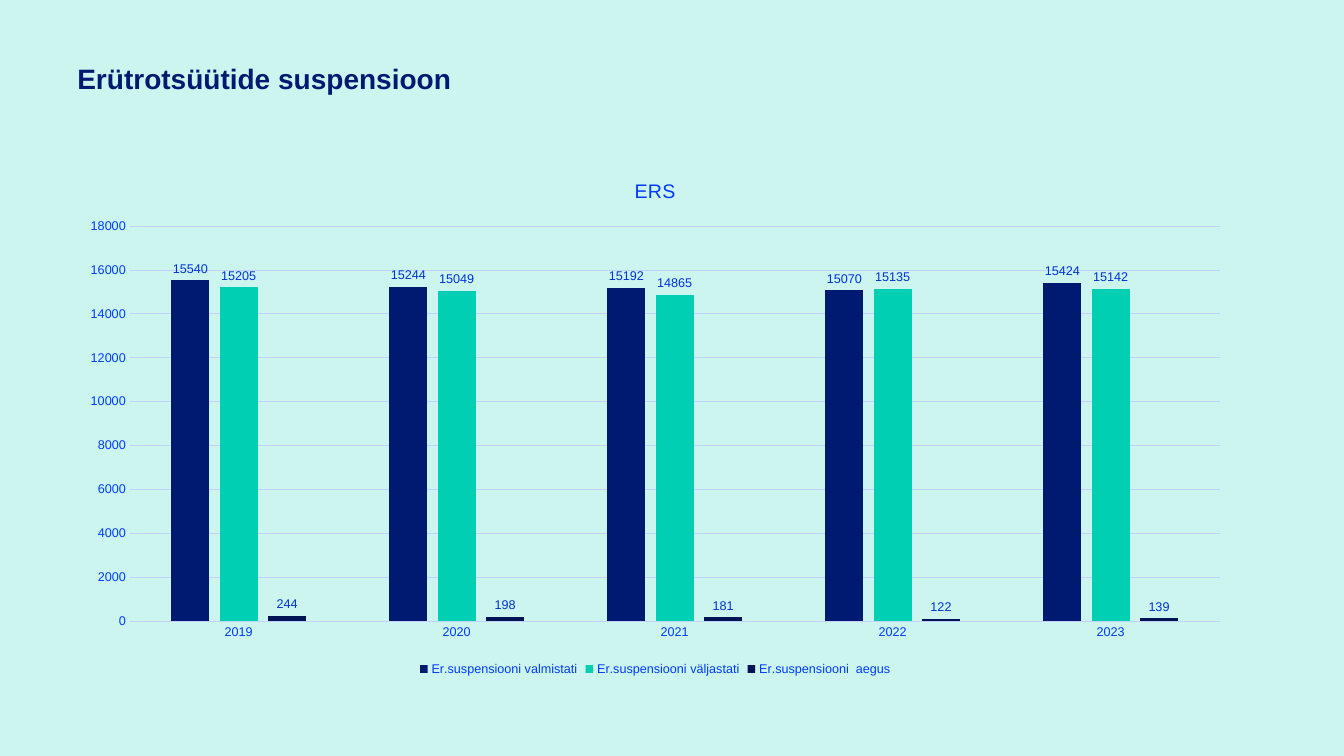
from pptx import Presentation
from pptx.chart.data import CategoryChartData
from pptx.dml.color import RGBColor
from pptx.enum.chart import XL_CHART_TYPE as ChartType
from pptx.enum.chart import XL_LABEL_POSITION as LabelPosition
from pptx.enum.chart import XL_LEGEND_POSITION as LegendPosition
from pptx.enum.chart import XL_TICK_MARK as TickMark
from pptx.enum.text import MSO_ANCHOR, PP_ALIGN
from pptx.util import Inches, Pt

MINT = RGBColor(0xCC, 0xF5, 0xF0)
NAVY = RGBColor(0x00, 0x1A, 0x71)
TEAL = RGBColor(0x00, 0xCF, 0xB3)
MIDNIGHT = RGBColor(0x00, 0x13, 0x55)
BLUE = RGBColor(0x00, 0x3A, 0xFC)
LABEL_BLUE = RGBColor(0x00, 0x31, 0xD4)
PALE_BLUE = RGBColor(0xC3, 0xD1, 0xFF)

WIDTH, HEIGHT = Inches(13.33), Inches(7.5)
MARGIN = 0.05
YEARS = ["2019", "2020", "2021", "2022", "2023"]
SERIES = [
    ("Er.suspensiooni valmistati", [15540, 15244, 15192, 15070, 15424], NAVY),
    ("Er.suspensiooni väljastati", [15205, 15049, 14865, 15135, 15142], TEAL),
    ("Er.suspensiooni  aegus", [244, 198, 181, 122, 139], MIDNIGHT),
]


def share_box(left, top, width, height):
    """Turn shares of the slide into a box of lengths."""
    return (int(WIDTH * left), int(HEIGHT * top),
            int(WIDTH * width), int(HEIGHT * height))


def set_font(font, size, color, bold=False):
    """Apply the deck's typeface with a size and colour."""
    font.name = "Arial"
    font.size = Pt(size)
    font.bold = bold
    font.color.rgb = color


def set_line(line, color):
    """Draw a thin line in the given colour."""
    line.color.rgb = color
    line.width = Pt(0.75)


def place_title(page, box, text):
    """Move the title placeholder into the box and format it."""
    title = page.shapes.title
    title.left, title.top, title.width, title.height = box
    frame = title.text_frame
    frame.text = text
    frame.word_wrap = True
    frame.vertical_anchor = MSO_ANCHOR.TOP
    para = frame.paragraphs[0]
    para.alignment = PP_ALIGN.LEFT
    para.line_spacing = 0.9
    set_font(para.font, 20, NAVY, bold=True)


def format_axes(chart):
    """Style both axes and the horizontal gridlines."""
    for axis in (chart.category_axis, chart.value_axis):
        axis.major_tick_mark = axis.minor_tick_mark = TickMark.NONE
        set_font(axis.tick_labels.font, 9, BLUE)
    set_line(chart.category_axis.format.line, PALE_BLUE)
    value_axis = chart.value_axis
    value_axis.minimum_scale, value_axis.maximum_scale = 0, 18000
    value_axis.major_unit = 2000
    value_axis.format.line.fill.background()
    set_line(value_axis.major_gridlines.format.line, PALE_BLUE)


def format_series(plot):
    """Colour the columns and show their values."""
    plot.gap_width, plot.overlap = 219, -27
    plot.vary_by_categories = False
    for series, (_, _, color) in zip(plot.series, SERIES):
        series.format.fill.solid()
        series.format.fill.fore_color.rgb = color
        series.invert_if_negative = False
        labels = series.data_labels
        labels.show_value = True
        labels.position = LabelPosition.OUTSIDE_END
        set_font(labels.font, 9, LABEL_BLUE)


def place_chart(page, box, heading):
    """Fill the box with the yearly column chart."""
    data = CategoryChartData()
    data.categories = YEARS
    for name, values, _ in SERIES:
        data.add_series(name, values)
    chart = page.shapes.add_chart(ChartType.COLUMN_CLUSTERED, *box, data).chart
    set_font(chart.font, 10, NAVY)
    chart.has_title = True
    chart.chart_title.include_in_layout = False
    frame = chart.chart_title.text_frame
    frame.text = heading
    set_font(frame.paragraphs[0].font, 14, BLUE)
    chart.has_legend = True
    chart.legend.position = LegendPosition.BOTTOM
    chart.legend.include_in_layout = False
    set_font(chart.legend.font, 9, BLUE)
    format_axes(chart)
    format_series(chart.plots[0])


def build_chart_page(deck):
    """Add the page with a title above a chart."""
    page = deck.slides.add_slide(deck.slide_layouts[5])
    page.background.fill.solid()
    page.background.fill.fore_color.rgb = MINT
    place_title(page, share_box(MARGIN, 0.08, 0.88, 0.19),
                "Erütrotsüütide suspensioon")
    place_chart(page, share_box(MARGIN, 0.21, 0.875, 0.69), "ERS")


def main():
    """Build and save the deck."""
    deck = Presentation()
    deck.slide_width, deck.slide_height = WIDTH, HEIGHT
    build_chart_page(deck)
    deck.save("out.pptx")


if __name__ == "__main__":
    main()
